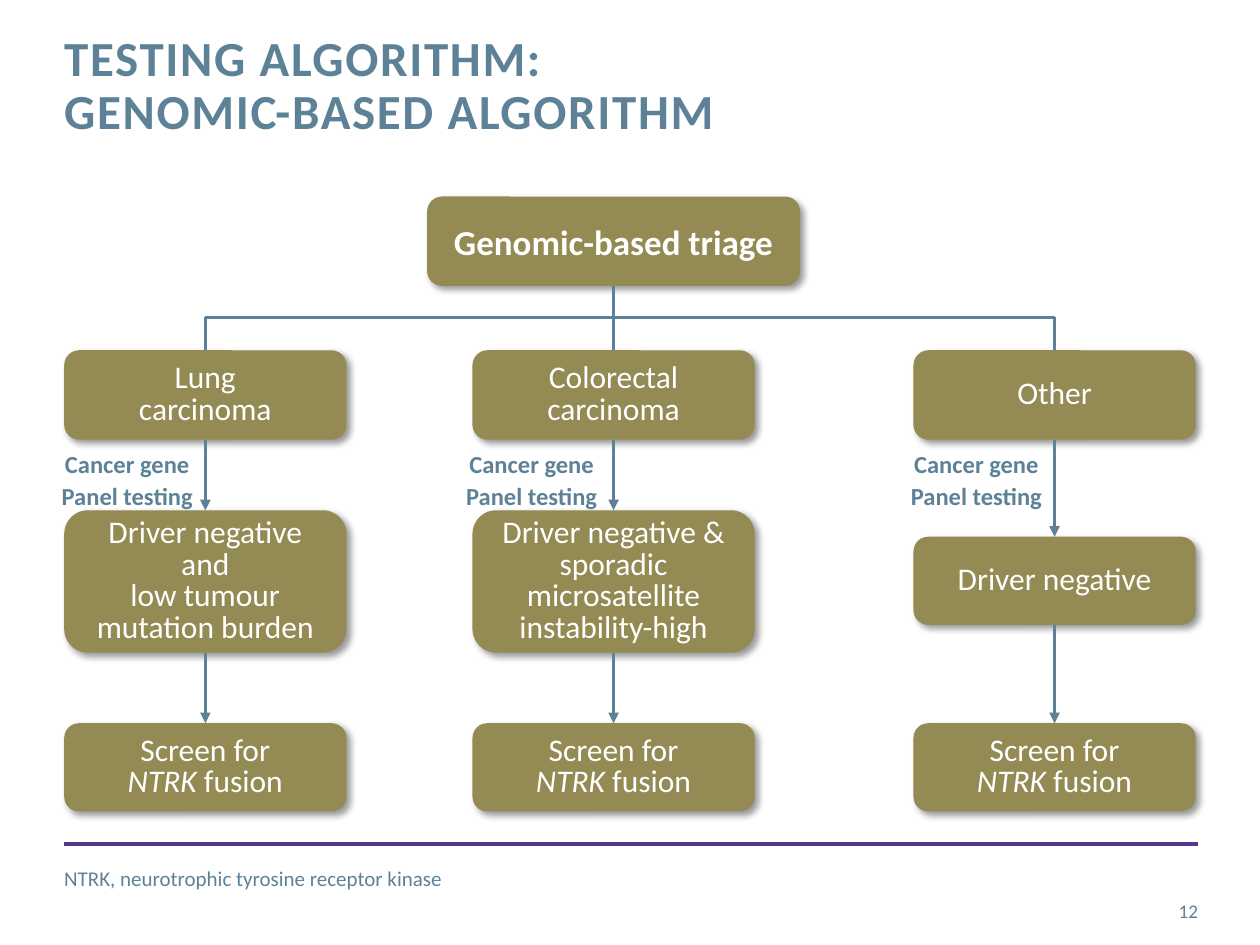
from dataclasses import dataclass

from lxml import etree
from pptx import Presentation
from pptx import util as u
from pptx.dml.color import RGBColor
from pptx.enum import shapes, text
from pptx.oxml.ns import qn

In = u.Inches
LEFT, MID, RIGHT = text.PP_ALIGN.LEFT, text.PP_ALIGN.CENTER, text.PP_ALIGN.RIGHT
TOP, CORE = text.MSO_ANCHOR.TOP, text.MSO_ANCHOR.MIDDLE


@dataclass(frozen=True)
class Theme:
    face: str = "Calibri"
    blue: str = "5D8298"
    olive: str = "948A54"
    white: str = "FFFFFF"
    violet: str = "56378D"
    shade: str = "000000"
    title: int = 28
    root: int = 20
    node: int = 18
    tag: int = 14
    note: int = 12
    page: int = 11


T = Theme()
SCREEN = "Screen for\v*NTRK* fusion"
COLS = [
    dict(x=0.51, tag=-0.14, name="Lung\vcarcinoma", top=4.05, high=1.13,
         test="Driver negative and\vlow tumour mutation burden"),
    dict(x=3.75, tag=-0.17, name="Colorectal\vcarcinoma", top=4.05, high=1.13,
         test="Driver negative &\vsporadic microsatellite instability-high"),
    dict(x=7.25, tag=-0.14, name="Other", top=4.26, high=0.7,
         test="Driver negative"),
]


def apply(item, form):
    for key, val in form.items():
        setattr(item, key, val)


def write(frame, words, size, color, bold=False, align=MID, anchor=CORE,
          pitch=None, pad=(0, 0), track=0):
    side, edge = In(pad[0]), In(pad[1])
    apply(frame, dict(word_wrap=True, vertical_anchor=anchor,
                      margin_left=side, margin_right=side,
                      margin_top=edge, margin_bottom=edge))
    for i, line in enumerate(words.split("\n")):
        para = frame.add_paragraph() if i else frame.paragraphs[0]
        apply(para, dict(alignment=align, line_spacing=pitch and u.Pt(pitch),
                         space_before=u.Pt(0)))
        for j, part in enumerate(line.split("*")):
            for k, bit in enumerate(part.split("\v")):
                if k:
                    para.add_line_break()
                if not bit:
                    continue
                run = para.add_run()
                run.text = bit
                apply(run.font, dict(name=T.face, size=u.Pt(size), bold=bold,
                                     italic=j % 2 == 1))
                run.font.color.rgb = RGBColor.from_string(color)
                if track:
                    run.font._element.set("spc", str(track))


def label(slide, box, words, size, **form):
    frame = slide.shapes.add_textbox(*map(In, box)).text_frame
    write(frame, words, size, T.blue, **form)


def node(slide, box, words, size=T.node, bold=False, pitch=18):
    kind = shapes.MSO_SHAPE.ROUNDED_RECTANGLE
    card = slide.shapes.add_shape(kind, *map(In, box))
    card.fill.solid()
    card.fill.fore_color.rgb = RGBColor.from_string(T.olive)
    card.line.fill.background()
    list_ = etree.SubElement(card._element.spPr, qn("a:effectLst"))
    cast = etree.SubElement(list_, qn("a:outerShdw"), blurRad=str(u.Pt(4)),
                            dist=str(u.Pt(3)), dir="2700000", algn="tl",
                            rotWithShape="0")
    tone = etree.SubElement(cast, qn("a:srgbClr"), val=T.shade)
    etree.SubElement(tone, qn("a:alpha"), val="40000")
    write(card.text_frame, words, size, T.white, bold=bold, pitch=pitch,
          pad=(0.11, 0))
    return card


def link(slide, start, end, color=T.blue, head=False, above=None, below=None):
    wire = slide.shapes.add_connector(shapes.MSO_CONNECTOR.STRAIGHT,
                                      *map(In, start + end))
    if above:
        wire.begin_connect(above, 2)
    if below:
        wire.end_connect(below, 0)
    wire.line.width = u.Pt(2)
    wire.line.color.rgb = RGBColor.from_string(color)
    if head:
        etree.SubElement(wire.line._get_or_add_ln(), qn("a:tailEnd"),
                         type="triangle")
    etree.SubElement(wire._element.spPr, qn("a:effectLst"))


def header(slide, box):
    title = slide.shapes.title
    apply(title, dict(zip(("left", "top", "width", "height"), map(In, box))))
    write(title.text_frame, "TESTING ALGORITHM:\vGENOMIC-BASED ALGORITHM",
          T.title, T.blue, bold=True, align=LEFT, anchor=TOP, pitch=30,
          track=100)


def footer(slide, box):
    x, y, wide, high = box
    link(slide, (x, y), (x + wide, y), color=T.violet)
    label(slide, (x, y + 0.07, 6.66, high),
          "NTRK, neurotrophic tyrosine receptor kinase", T.note, align=LEFT)
    label(slide, (x + wide - 0.64, y + 0.33, 0.64, high), "12", T.page,
          align=RIGHT)


def branch(slide, box, col):
    x, y, wide, high = box
    first = node(slide, (x, y, wide, 0.71), col["name"])
    test = node(slide, (x, col["top"], wide, col["high"]), col["test"])
    last = node(slide, (x, y + high - 0.7, wide, 0.7), SCREEN)
    label(slide, (x + col["tag"], y + 0.72, 1.28, 0.59),
          "Cancer gene\nPanel testing", T.tag, bold=True, anchor=TOP,
          pitch=18, pad=(0.05, 0.05))
    for above, below in ((first, test), (test, last)):
        link(slide, (x, y), (x, y), head=True, above=above, below=below)
    return first


def tree(slide, box):
    x, y, wide, high = box
    root = node(slide, (x + 2.88, y, 2.96, 0.71), "Genomic-based triage",
                T.root, bold=True, pitch=None)
    tops = [branch(slide, (col["x"], y + 1.22, 2.24, high - 1.22), col)
            for col in COLS]
    mids = [col["x"] + 1.12 for col in COLS]
    bar = y + 0.96
    link(slide, (mids[0], bar), (mids[2], bar))
    link(slide, (mids[1], y), (mids[1], bar), above=root, below=tops[1])
    for i in (0, 2):
        link(slide, (mids[i], bar), (mids[i], bar + 0.26), below=tops[i])


def main():
    deck = Presentation()
    apply(deck, dict(slide_width=In(10), slide_height=In(7.5)))
    slide = deck.slides.add_slide(deck.slide_layouts[5])
    header(slide, (0.51, 0.27, 7.17, 0.88))
    tree(slide, (0.51, 1.56, 8.98, 4.88))
    footer(slide, (0.51, 6.7, 9, 0.4))
    deck.save("out.pptx")


if __name__ == "__main__":
    main()
